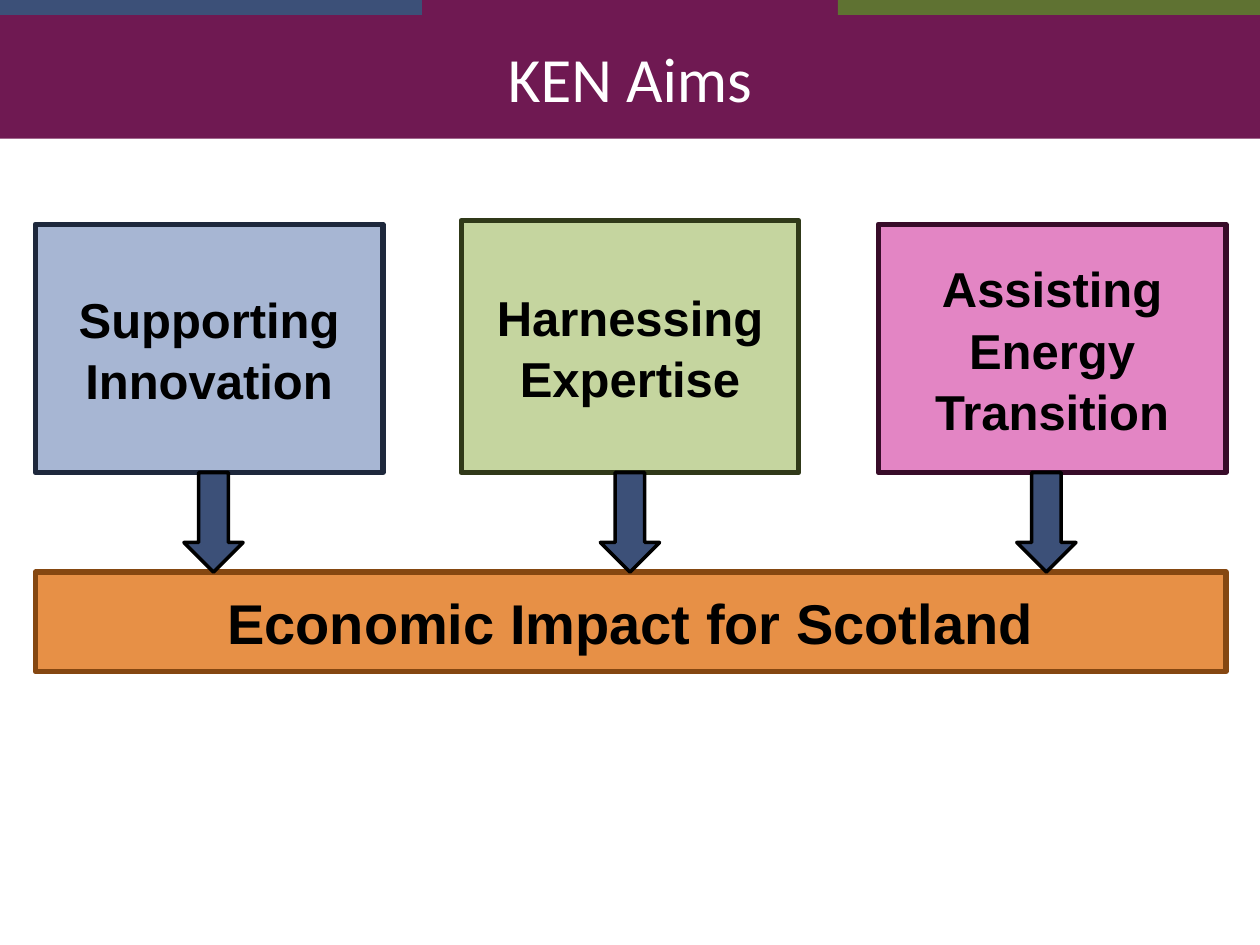
from pptx import Presentation
from pptx.dml.color import RGBColor
from pptx.enum.shapes import MSO_SHAPE as SHAPE
from pptx.enum.text import MSO_ANCHOR as ANCHOR, PP_ALIGN as ALIGN
from pptx.util import Inches, Pt


def rgb(value):
    return RGBColor.from_string(value)


def add_box(x, y, w, h, fill, line=None, weight=3, lines=(), size=28,
            font="Arial", color="000000", bold=True, kind=SHAPE.RECTANGLE):
    sp = s.shapes.add_shape(kind, Inches(x), Inches(y), Inches(w), Inches(h))
    sp.shadow.inherit = False
    sp.fill.solid()
    sp.fill.fore_color.rgb = rgb(fill)
    if line:
        sp.line.color.rgb = rgb(line)
        sp.line.width = Pt(weight)
    else:
        sp.line.fill.background()
    tf = sp.text_frame
    tf.word_wrap = True
    tf.vertical_anchor = ANCHOR.MIDDLE
    for i, text in enumerate(lines):
        p = tf.add_paragraph() if i else tf.paragraphs[0]
        p.text = text
        p.alignment = ALIGN.CENTER
        if len(lines) > 1:
            p.line_spacing = 1.04
        p.font.name = font
        p.font.size = Pt(size)
        p.font.bold = bold
        p.font.color.rgb = rgb(color)


prs = Presentation()
prs.slide_width, prs.slide_height = Inches(10), Inches(7.5)
s = prs.slides.add_slide(prs.slide_layouts[6])

NAVY, PLUM, OLIVE = "3C5078", "6F1952", "5F7232"
for x, fill in [(0, NAVY), (3.35, PLUM), (6.65, OLIVE)]:
    add_box(x, 0, 3.35, 0.12, fill)
add_box(0, 0.12, 10, 0.98, PLUM, lines=["KEN Aims"], size=36,
        font="Calibri", color="FFFFFF", bold=False)

aims = [
    (0.28, 1.78, 2.76, "A7B6D3", "1E283C", ["Supporting", "Innovation"]),
    (3.66, 1.75, 2.68, "C5D59F", "303919", ["Harnessing", "Expertise"]),
    (6.97, 1.78, 2.76, "E385C4", "380C29", ["Assisting", "Energy", "Transition"]),
]
base, impact_top = 3.75, 4.54
for x, y, w, fill, line, lines in aims:
    add_box(x, y, w, base - y, fill, line, lines=lines)
add_box(0.28, impact_top, 9.45, 0.79, "E79046", "854711",
        lines=["Economic Impact for Scotland"], size=32)
for i in range(3):
    add_box(1.46 + 3.305 * i, base, 0.47, impact_top - base, NAVY, "000000", 2,
            kind=SHAPE.DOWN_ARROW)

prs.save("out.pptx")
